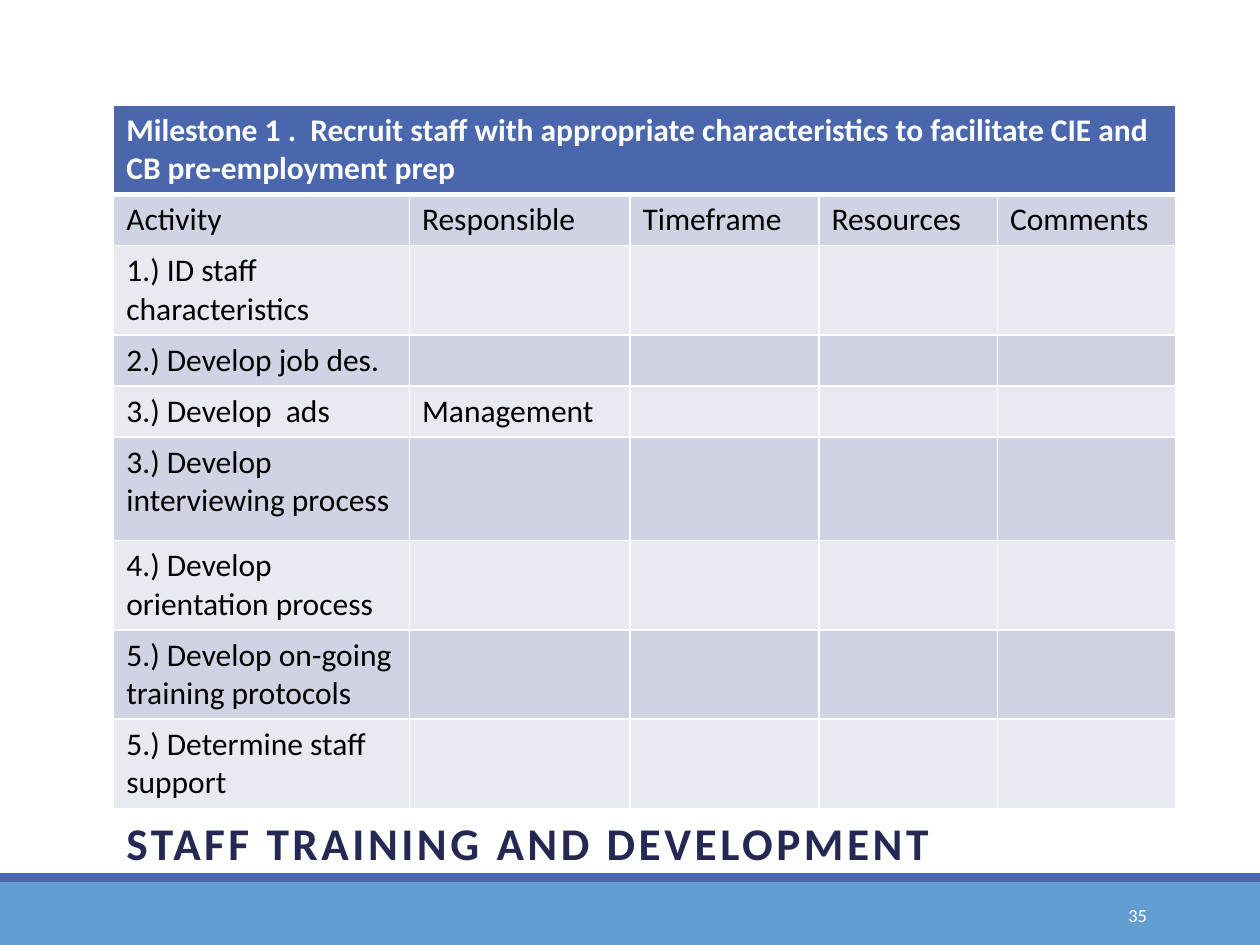
from lxml import etree
from pptx import Presentation
from pptx.dml.color import RGBColor
from pptx.enum.shapes import MSO_SHAPE
from pptx.enum.text import MSO_ANCHOR, PP_ALIGN
from pptx.oxml.ns import qn
from pptx.util import Pt

RECTANGLE = MSO_SHAPE.RECTANGLE
MIDDLE, BOTTOM = MSO_ANCHOR.MIDDLE, MSO_ANCHOR.BOTTOM
LEFT, RIGHT = PP_ALIGN.LEFT, PP_ALIGN.RIGHT
TITLE_ONLY = 5
FONT = "Calibri"
COLORS = {
    "footer": "629DD1", "accent": "4A66AC", "title": "242852",
    "dark_band": "D0D3E3", "light_band": "E9EAF1",
    "white": "FFFFFF", "black": "000000",
}
MILESTONE = ("Milestone 1 .  Recruit staff with appropriate characteristics "
             "to facilitate CIE and CB pre-employment prep")
HEADINGS = ["Activity", "Responsible", "Timeframe", "Resources", "Comments"]
ACTIVITIES = [
    ["1.) ID staff characteristics"],
    ["2.) Develop job des."],
    ["3.) Develop  ads", "Management"],
    ["3.) Develop interviewing process"],
    ["4.) Develop orientation process"],
    ["5.) Develop on-going training protocols"],
    ["5.) Determine staff support"],
]
COLUMN_WIDTHS = [169, 126, 108, 102, 102]
ONE_LINE, TWO_LINES, TALL = 29.25, 51.1, 59
ROW_HEIGHTS = [TWO_LINES, ONE_LINE, TWO_LINES, ONE_LINE, ONE_LINE,
               TALL, TWO_LINES, TWO_LINES, TWO_LINES]


def rgb(name):
    return RGBColor.from_string(COLORS[name])


def style_paragraph(para, size, color, bold=False, align=LEFT):
    para.alignment = align
    para.font.name = FONT
    para.font.size = Pt(size)
    para.font.bold = bold
    para.font.color.rgb = rgb(color)


def add_band(page, left, top, width, height, color):
    band = page.shapes.add_shape(RECTANGLE, Pt(left), Pt(top), Pt(width), Pt(height))
    band.shadow.inherit = False
    band.fill.solid()
    band.fill.fore_color.rgb = rgb(color)
    band.line.fill.background()


def add_footer(page, left, top, width, height, number):
    """Draw the two bottom bands and the slide number."""
    rule = 5
    add_band(page, left, top + rule, width, height - rule, "footer")
    add_band(page, left, top, width, rule, "accent")
    box = page.shapes.add_textbox(Pt(left + 584.5), Pt(top + 9.5), Pt(78), Pt(29))
    frame = box.text_frame
    frame.word_wrap = True
    frame.vertical_anchor = MIDDLE
    frame.text = number
    style_paragraph(frame.paragraphs[0], 10.5, "white", align=RIGHT)


def place_title(page, left, top, width, height, text):
    title = page.shapes.title
    title.left, title.top, title.width, title.height = map(Pt, (left, top, width, height))
    frame = title.text_frame
    frame.word_wrap = True
    frame.vertical_anchor = BOTTOM
    frame.margin_bottom = Pt(2)
    frame.text = text
    para = frame.paragraphs[0]
    para.line_spacing = 0.8
    style_paragraph(para, 25.9, "title", bold=True)
    para.runs[0]._r.get_or_add_rPr().set("spc", "200")


def set_borders(cell, bottom):
    properties = cell._tc.get_or_add_tcPr()
    for side, width in (("L", 1), ("R", 1), ("T", 1), ("B", bottom)):
        line = etree.SubElement(properties, qn(f"a:ln{side}"), w=str(Pt(width)))
        fill = etree.SubElement(line, qn("a:solidFill"))
        etree.SubElement(fill, qn("a:srgbClr"), val=COLORS["white"])


def add_plan_table(page, left, top):
    """Draw the milestone table, with bands that alternate below its header."""
    rows = [[MILESTONE], HEADINGS] + ACTIVITIES
    table = page.shapes.add_table(
        len(rows), len(COLUMN_WIDTHS), Pt(left), Pt(top),
        Pt(sum(COLUMN_WIDTHS)), Pt(sum(ROW_HEIGHTS))).table
    for column, width in zip(table.columns, COLUMN_WIDTHS):
        column.width = Pt(width)
    for row, height in zip(table.rows, ROW_HEIGHTS):
        row.height = Pt(height)
    table.cell(0, 0).merge(table.cell(0, len(COLUMN_WIDTHS) - 1))
    for index, texts in enumerate(rows):
        header = index == 0
        band = "accent" if header else "dark_band" if index % 2 else "light_band"
        for cell in table.rows[index].cells:
            set_borders(cell, 3 if header else 1)
            cell.fill.solid()
            cell.fill.fore_color.rgb = rgb(band)
        for column, text in enumerate(texts):
            cell = table.cell(index, column)
            cell.text = text
            style_paragraph(cell.text_frame.paragraphs[0], 18,
                            "white" if header else "black", bold=header)


def main():
    deck = Presentation()
    deck.slide_width, deck.slide_height = Pt(720), Pt(540)
    page = deck.slides.add_slide(deck.slide_layouts[TITLE_ONLY])
    add_footer(page, 0, 499, 720, 41, "35")
    place_title(page, 65, 430.5, 607, 68, "STAFF TRAINING AND DEVELOPMENT")
    add_plan_table(page, 65, 60)
    deck.save("out.pptx")


if __name__ == "__main__":
    main()
